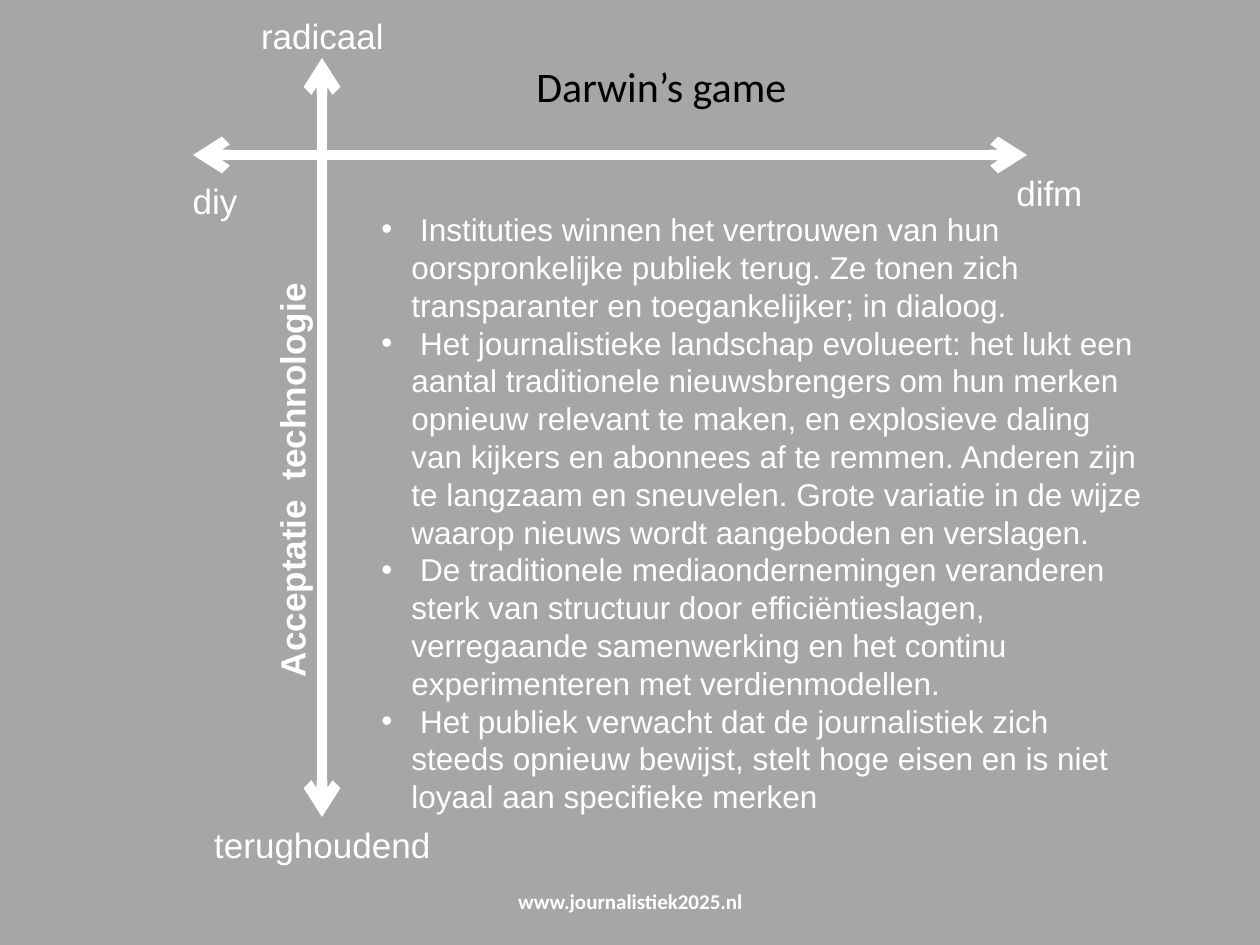
import pptx
import pptx.dml.color
import pptx.enum.shapes
import pptx.enum.text
import pptx.oxml.ns
import pptx.util
from lxml import etree

PX = 914400 / 126  # EMU per px
WHITE = "FFFFFF"
ALIGN = pptx.enum.text.PP_ALIGN
ANCHOR = pptx.enum.text.MSO_ANCHOR

POINTS = [
    " Instituties winnen het vertrouwen van hun oorspronkelijke publiek terug. "
    "Ze tonen zich transparanter en toegankelijker; in dialoog.",
    " Het journalistieke landschap evolueert: het lukt een aantal traditionele "
    "nieuwsbrengers om hun merken opnieuw relevant te maken, en explosieve daling "
    "van kijkers en abonnees af te remmen. Anderen zijn te langzaam en sneuvelen. "
    "Grote variatie in de wijze waarop nieuws wordt aangeboden en verslagen.",
    " De traditionele mediaondernemingen veranderen sterk van structuur door "
    "efficiëntieslagen, verregaande samenwerking en het continu experimenteren "
    "met verdienmodellen.",
    " Het publiek verwacht dat de journalistiek zich steeds opnieuw bewijst, "
    "stelt hoge eisen en is niet loyaal aan specifieke merken",
]


def px(n):
    return pptx.util.Emu(round(n * PX))


def rgb(code):
    return pptx.dml.color.RGBColor.from_string(code)


def sub(parent, tag, **attrs):
    return etree.SubElement(parent, pptx.oxml.ns.qn(tag), **attrs)


def place(sp, x, y, w, h):
    sp.left, sp.top, sp.width, sp.height = px(x), px(y), px(w), px(h)


def format_text(sp, size, color=WHITE, font="Arial", bold=False,
                align=ALIGN.LEFT, anchor=ANCHOR.TOP):
    tf = sp.text_frame
    tf.word_wrap = True
    tf.auto_size = pptx.enum.text.MSO_AUTO_SIZE.NONE
    tf.vertical_anchor = anchor
    for p in tf.paragraphs:
        p.alignment = align
        for r in p.runs:
            r.font.size = pptx.util.Pt(size)
            r.font.name = font
            r.font.bold = bold
            r.font.color.rgb = rgb(color)


def add_text(s, text, box, size, **style):
    sp = s.shapes.add_textbox(*map(px, box))
    sp.text_frame.text = text
    format_text(sp, size, **style)
    return sp


def add_bullets(s, points, box, size, indent):
    sp = add_text(s, "\n".join(points), box, size)
    for p in sp.text_frame.paragraphs:
        pPr = p._p.get_or_add_pPr()
        pPr.set("marL", str(px(indent)))
        pPr.set("indent", str(px(-indent)))
        sub(pPr, "a:buFont", typeface="Arial")
        sub(pPr, "a:buChar", char="•")


def add_axis(s, x1, y1, x2, y2):
    straight = pptx.enum.shapes.MSO_CONNECTOR.STRAIGHT
    sp = s.shapes.add_connector(straight, px(x1), px(y1), px(x2), px(y2))
    sp.line.color.rgb = rgb(WHITE)
    sp.line.width = pptx.util.Pt(6)
    ln = sp.line._get_or_add_ln()
    for end in ("a:headEnd", "a:tailEnd"):
        sub(ln, end, type="arrow")
    sub(sp._element.spPr, "a:effectLst")


def main():
    prs = pptx.Presentation()
    prs.slide_width, prs.slide_height = px(1260), px(945)
    s = prs.slides.add_slide(prs.slide_layouts[5])
    s.background.fill.solid()
    s.background.fill.fore_color.rgb = rgb("A6A6A6")

    # Axes
    add_axis(s, 322, 817, 322, 58)
    add_axis(s, 193, 155, 1027, 155)

    # Axis name and the labels at the ends
    sp = add_text(s, "Acceptatie  technologie", (24, 394, 536, 55), 20, bold=True)
    sp.rotation = 270
    for text, x, y, w in [("difm", 897, 165, 305), ("diy", 53, 173, 324),
                          ("radicaal", 178, 8, 289), ("terughoudend", 179, 817, 287)]:
        add_text(s, text, (x, y, w, 55), 20, align=ALIGN.CENTER)

    # Scenario
    add_bullets(s, POINTS, (369, 204, 785, 814), 18, indent=30)

    # Title
    title = s.shapes.title
    title.text_frame.text = "Darwin’s game"
    place(title, 154, 54, 645, 63)
    format_text(title, 24, color="000000", font="Calibri", align=ALIGN.RIGHT)

    # Footer
    add_text(s, "www.journalistiek2025.nl", (431, 876, 399, 50), 12, font="Calibri",
             bold=True, align=ALIGN.CENTER, anchor=ANCHOR.MIDDLE)

    prs.save("out.pptx")


if __name__ == "__main__":
    main()
